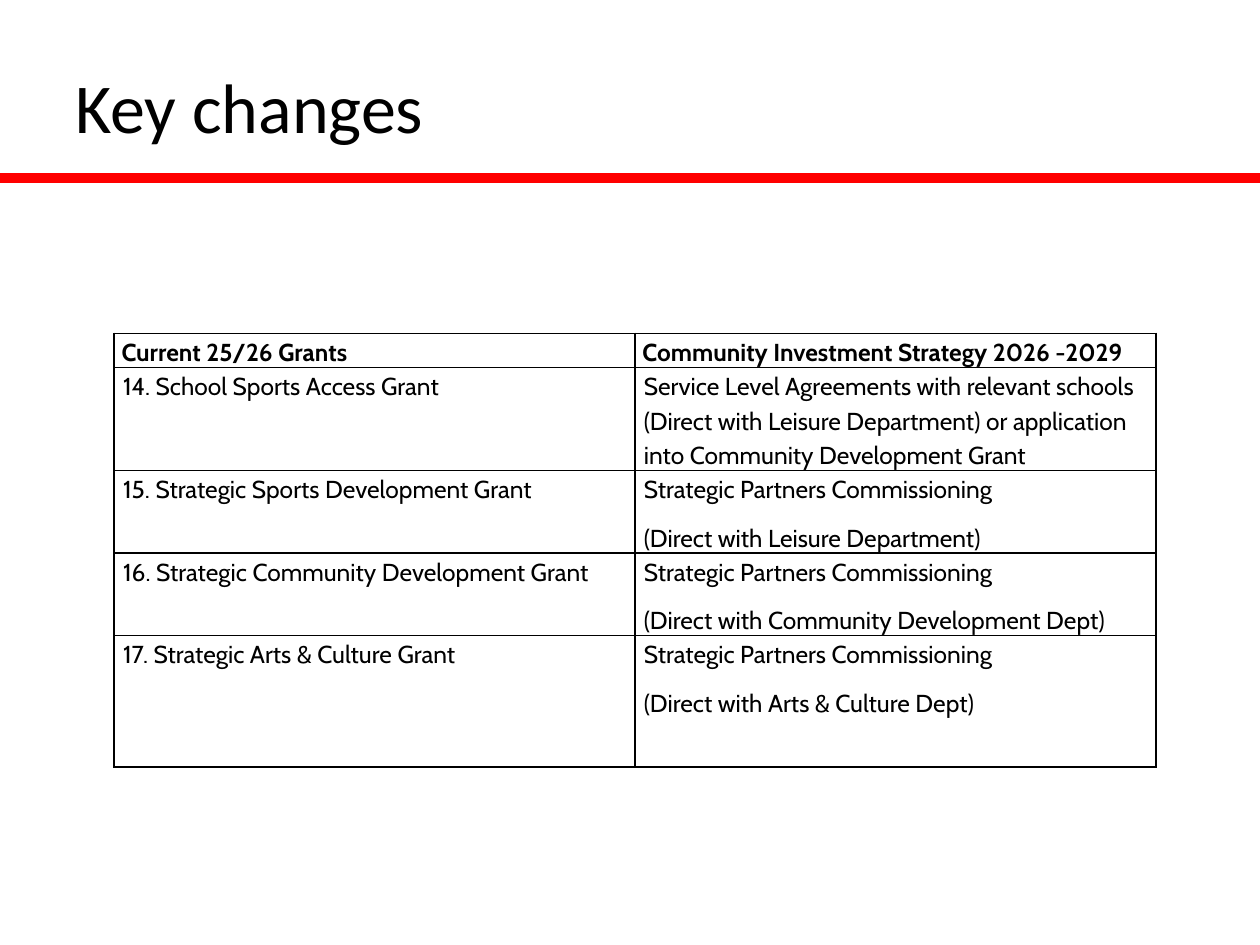
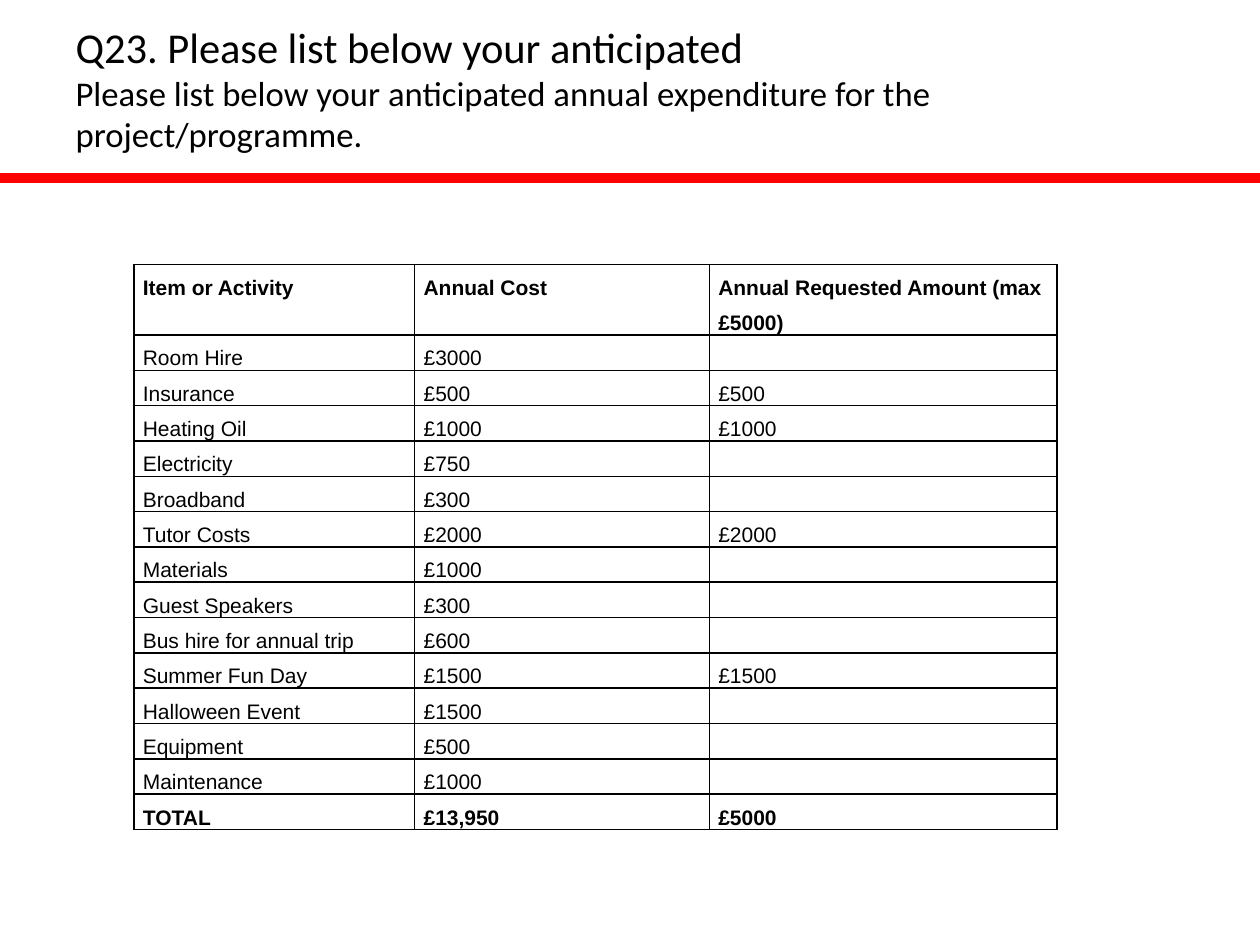
import pptx
import pptx.dml.color
import pptx.enum.shapes
import pptx.enum.text
import pptx.oxml.ns
import pptx.util
from lxml import etree

Cm = pptx.util.Cm
Pt = pptx.util.Pt
qn = pptx.oxml.ns.qn
ANCHOR = pptx.enum.text.MSO_ANCHOR

COLOURS = {"text": "000000", "band": "FF0000", "border": "000000"}
TITLE_FONT = "Calibri"

GRANT_ROWS = [
    ["Current 25/26 Grants", "Community Investment Strategy 2026 -2029"],
    ["14. School Sports Access Grant",
     "Service Level Agreements with relevant schools (Direct with Leisure Department) "
     "or application into Community Development Grant"],
    ["15. Strategic Sports Development Grant",
     "Strategic Partners Commissioning\n(Direct with Leisure Department)"],
    ["16. Strategic Community Development Grant",
     "Strategic Partners Commissioning\n(Direct with Community Development Dept)"],
    ["17. Strategic Arts & Culture Grant",
     "Strategic Partners Commissioning\n(Direct with Arts & Culture Dept)"],
]

COST_ROWS = [
    ["Item or Activity", "Annual Cost", "Annual Requested Amount (max £5000)"],
    ["Room Hire", "£3000", ""],
    ["Insurance", "£500", "£500"],
    ["Heating Oil", "£1000", "£1000"],
    ["Electricity", "£750", ""],
    ["Broadband", "£300", ""],
    ["Tutor Costs", "£2000", "£2000"],
    ["Materials", "£1000", ""],
    ["Guest Speakers", "£300", ""],
    ["Bus hire for annual trip", "£600", ""],
    ["Summer Fun Day", "£1500", "£1500"],
    ["Halloween Event", "£1500", ""],
    ["Equipment", "£500", ""],
    ["Maintenance", "£1000", ""],
    ["TOTAL", "£13,950", "£5000"],
]


def rgb(name):
    return pptx.dml.color.RGBColor.from_string(COLOURS[name])


class SlideBuilder:
    def __init__(self, deck):
        self.deck = deck
        self.page = None

    def start_page(self):
        title_only = self.deck.slide_layouts[5]
        self.page = self.deck.slides.add_slide(title_only)
        self.band()

    def band(self):
        band = self.page.shapes.add_shape(
            pptx.enum.shapes.MSO_SHAPE.RECTANGLE,
            Cm(0), Cm(3.53), self.deck.slide_width, Cm(0.13))
        band.shadow.inherit = False
        band.fill.solid()
        band.fill.fore_color.rgb = rgb("band")
        band.line.color.rgb = rgb("band")
        band.line.width = Pt(2)

    def span(self, para, text, font, size, bold=False):
        span = para.add_run()
        span.text = text
        span.font.name = font
        span.font.size = Pt(size)
        span.font.bold = bold
        span.font.color.rgb = rgb("text")

    def title(self, lines, anchor=ANCHOR.MIDDLE, bottom_inset=0.13):
        """Write (text, size) lines into the title placeholder."""
        box = self.page.shapes.title
        box.left, box.top, box.width, box.height = Cm(1.27), Cm(1.12), Cm(22.86), Cm(2)
        frame = box.text_frame
        frame.word_wrap = True
        frame.auto_size = pptx.enum.text.MSO_AUTO_SIZE.NONE
        frame.vertical_anchor = anchor
        frame.margin_bottom = Cm(bottom_inset)
        para = frame.paragraphs[0]
        para.alignment = pptx.enum.text.PP_ALIGN.LEFT
        for index, (text, size) in enumerate(lines):
            if index:
                para.add_line_break()
            self.span(para, text, TITLE_FONT, size)

    def cell_borders(self, cell):
        properties = cell._tc.get_or_add_tcPr()
        for side in ("a:lnL", "a:lnR", "a:lnT", "a:lnB"):
            line = etree.SubElement(properties, qn(side), w=str(Pt(1)))
            fill = etree.SubElement(line, qn("a:solidFill"))
            etree.SubElement(fill, qn("a:srgbClr"), val=COLOURS["border"])

    def cell(self, cell, text, font, size, spacing, bold, inset):
        self.cell_borders(cell)
        cell.fill.background()
        cell.margin_left = cell.margin_right = Cm(inset)
        cell.margin_top = cell.margin_bottom = 0
        cell.vertical_anchor = ANCHOR.TOP
        frame = cell.text_frame
        for index, line in enumerate(text.split("\n")):
            para = frame.add_paragraph() if index else frame.paragraphs[0]
            para.line_spacing = spacing
            para.space_after = Pt(8)
            if line:
                self.span(para, line, font, size, bold)
            else:
                # Keeps an empty cell from growing to the default text size
                etree.SubElement(para._p, qn("a:endParaRPr"), sz=str(size * 100))

    def table(self, rows, left, top, widths, heights, font, size, spacing,
              bold_rows=(0,), header_inset=0.18):
        table = self.page.shapes.add_table(
            len(rows), len(widths), Cm(left), Cm(top),
            Cm(sum(widths)), Cm(sum(heights))).table
        table.first_row = table.horz_banding = False
        for column, width in zip(table.columns, widths):
            column.width = Cm(width)
        for row_index, (row, height) in enumerate(zip(rows, heights)):
            table.rows[row_index].height = Cm(height)
            inset = 0.18 if row_index else header_inset
            for column_index, text in enumerate(row):
                self.cell(table.cell(row_index, column_index), text, font, size,
                          spacing, row_index in bold_rows, inset)


def main():
    deck = pptx.Presentation()
    deck.slide_width, deck.slide_height = Cm(25.4), Cm(19.05)
    builder = SlideBuilder(deck)

    builder.start_page()
    builder.title([("Key changes", 40)])
    builder.table(GRANT_ROWS, 2.3, 6.72, [10.5] * 2, [0.68, 2.07, 1.66, 1.66, 2.65],
                  "Cabin", 14, 1.15, header_inset=0.15)

    builder.start_page()
    builder.title([("Q23. Please list below your anticipated", 24.3),
                   ("Please list below your anticipated annual expenditure "
                    "for the project/programme.", 19.8)],
                  anchor=ANCHOR.BOTTOM, bottom_inset=0)
    last = len(COST_ROWS) - 1
    builder.table(COST_ROWS, 2.7, 5.33, [5.66, 5.94, 7.01], [1.42] + [0.71] * last,
                  "Arial", 12, 1.5, bold_rows=(0, last))

    deck.save("out.pptx")


if __name__ == "__main__":
    main()
